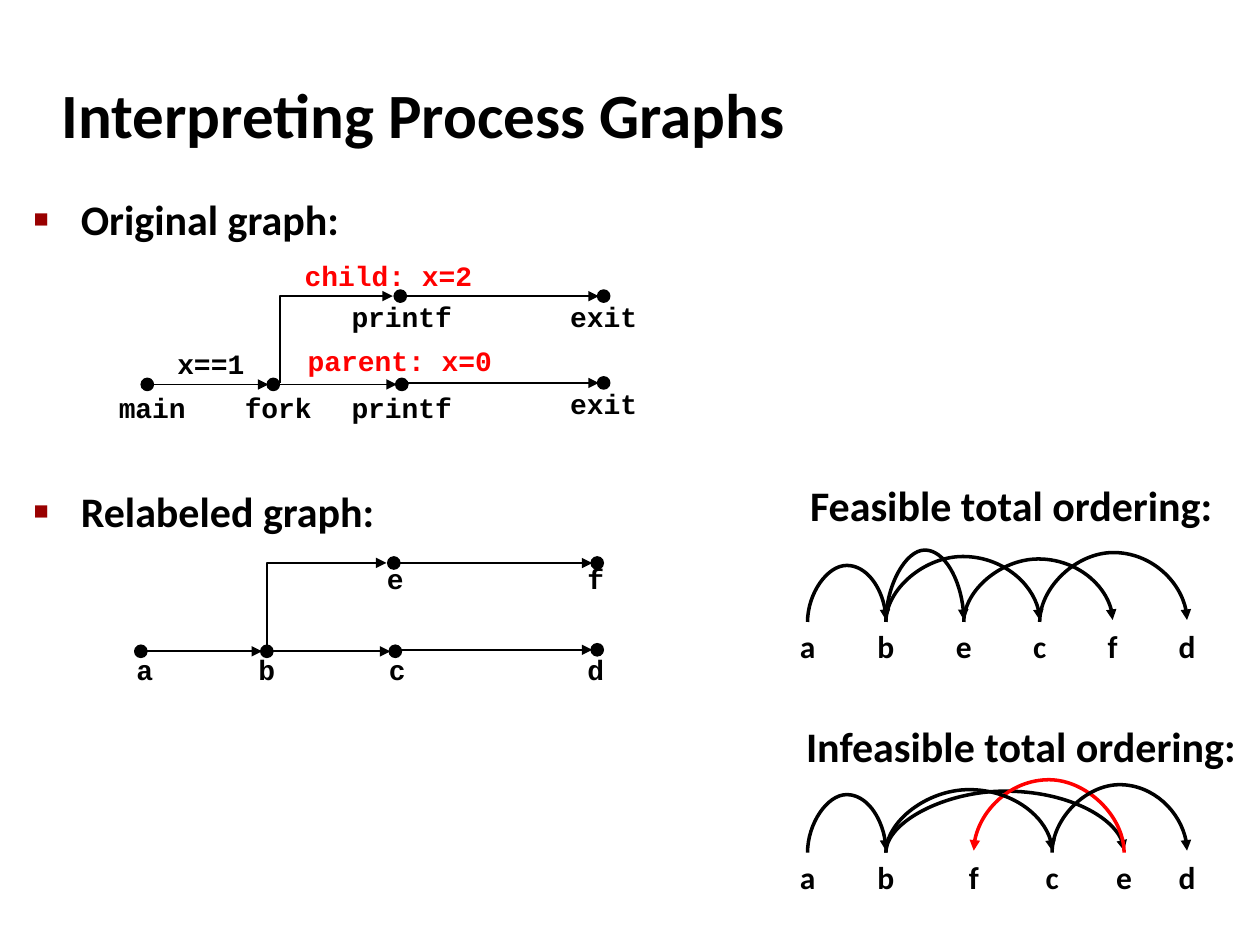
from lxml import etree
from pptx import Presentation
from pptx.dml.color import RGBColor
from pptx.enum import shapes, text
from pptx.oxml import ns
from pptx.util import Cm, Pt

BLACK, RED, MAROON = "000000", "FF0000", "990000"
DOT = 0.25
LABEL_HEIGHT = 0.94
ARC_WIDTH = 0.04  # height difference between the two ends of an arc


def colour(value):
    return RGBColor.from_string(value)


def add_xml(parent, tag, **attributes):
    return etree.SubElement(parent, ns.qn(tag), attributes)


def format_text(frame, words, size=16, font="Courier New", tint=BLACK,
                align=text.PP_ALIGN.CENTER, anchor=text.MSO_ANCHOR.TOP,
                wrap=False, before=0):
    """Write one paragraph per item of words in the given format."""
    frame.word_wrap = wrap
    frame.vertical_anchor = anchor
    for index, line in enumerate(words):
        para = frame.add_paragraph() if index else frame.paragraphs[0]
        para.alignment = align
        para.space_before = Pt(before if index else 0)
        span = para.add_run()
        span.text = line
        span.font.name = font
        span.font.size = Pt(size)
        span.font.bold = True
        span.font.color.rgb = colour(tint)
    return frame


def add_text(page, words, left, top, width, height=LABEL_HEIGHT, **style):
    box = page.shapes.add_textbox(Cm(left), Cm(top), Cm(width), Cm(height))
    return format_text(box.text_frame, [words] if isinstance(words, str) else words, **style)


def add_arrow(page, start, end, tint=BLACK, weight=1,
              kind=shapes.MSO_CONNECTOR.STRAIGHT):
    arrow = page.shapes.add_connector(kind, *(Cm(n) for n in (*start, *end)))
    arrow.line.color.rgb = colour(tint)
    arrow.line.width = Pt(weight)
    add_xml(arrow.line._get_or_add_ln(), "a:tailEnd", type="triangle")
    add_xml(arrow._element.spPr, "a:effectLst")
    return arrow


def add_turned_arrow(page, start, end, preset, adjust=None, **style):
    """Connector that leaves its start upwards; its frame is a quarter turned."""
    middle_x, middle_y = (start[0] + end[0]) / 2, (start[1] + end[1]) / 2
    half_w, half_h = abs(start[1] - end[1]) / 2, abs(start[0] - end[0]) / 2
    arrow = add_arrow(page, (middle_x - half_w, middle_y - half_h),
                      (middle_x + half_w, middle_y + half_h),
                      kind=shapes.MSO_CONNECTOR.CURVE, **style)
    properties = arrow._element.spPr
    frame = properties.find(ns.qn("a:xfrm"))
    rightward = end[0] > start[0]
    frame.set("rot", str((90 if rightward else 270) * 60000))
    frame.set("flipV", "1")
    if rightward:
        frame.set("flipH", "1")
    geometry = properties.find(ns.qn("a:prstGeom"))
    geometry.set("prst", preset)
    if adjust is not None:
        guides = geometry.find(ns.qn("a:avLst"))
        if guides is None:
            guides = add_xml(geometry, "a:avLst")
        add_xml(guides, "a:gd", name="adj1", fmla=f"val {round(adjust * 100000)}")


def add_title(page, words, left, top, width, height):
    title = page.shapes.title
    title.left, title.top, title.width, title.height = map(Cm, (left, top, width, height))
    format_text(title.text_frame, [words], size=36, font="Calibri", wrap=True,
                align=text.PP_ALIGN.LEFT, anchor=text.MSO_ANCHOR.MIDDLE)


def add_bullets(page, lines, left, top, width, height):
    frame = add_text(page, lines, left, top, width, height, size=24, before=138,
                     font="Calibri", align=text.PP_ALIGN.LEFT, wrap=True)
    for para in frame.paragraphs:
        properties = para._p.get_or_add_pPr()
        properties.set("marL", str(Cm(0.95)))
        properties.set("indent", str(-Cm(0.95)))
        add_xml(add_xml(properties, "a:buClr"), "a:srgbClr", val=MAROON)
        add_xml(properties, "a:buSzPct", val="60000")
        add_xml(properties, "a:buFont", typeface="Arial")
        add_xml(properties, "a:buChar", char="■")


def add_graph(page, left, top, labels, fork_x):
    """Process graph: parent row below, child row on top, joined at the fork."""
    parent = [(0, 1.78), (2.54, 1.78), (5.13, 1.78), (9.2, 1.75)]
    child = [(5.1, 0), (9.2, 0)]

    # Edges
    for row in (parent, child):
        for (x1, _), (x2, y) in zip(row, row[1:]):
            add_arrow(page, (left + x1 + 0.1, top + y), (left + x2 - 0.1, top + y))
    add_turned_arrow(page, (left + fork_x, top + 1.75), (left + 4.95, top),
                     "bentConnector2")

    # Nodes
    for x, y in parent + child:
        dot = page.shapes.add_shape(shapes.MSO_SHAPE.OVAL, Cm(left + x - DOT / 2),
                                    Cm(top + y - DOT / 2), Cm(DOT), Cm(DOT))
        dot.shadow.inherit = False
        dot.fill.solid()
        dot.fill.fore_color.rgb = colour(BLACK)
        dot.line.color.rgb = colour(BLACK)
        dot.line.width = Pt(0.75)

    # Labels, centred on x
    for words, x, y, tint in labels:
        width = 0.34 * len(words) + 0.51
        add_text(page, words, left + x - width / 2, top + y, width, tint=tint)


def add_ordering(page, left, top, height, heading, inset, width, stops, arcs):
    """Heading, a row of letters at the bottom, and arcs (from, to, rise, tint)."""
    letters_top = top + height - 1.02
    for letter, x in stops.items():
        add_text(page, letter, left + x - 0.42, letters_top, 0.84, 1.02,
                 size=18, font="Calibri")
    for first, last, rise, tint in arcs:
        add_turned_arrow(page, (left + stops[first], letters_top + ARC_WIDTH / 2),
                         (left + stops[last], letters_top - ARC_WIDTH / 2),
                         "curvedConnector3", rise / ARC_WIDTH, tint=tint, weight=2)
    add_text(page, heading, left + inset, top, width, 1.27, size=24,
             font="Calibri", align=text.PP_ALIGN.LEFT)


def main():
    deck = Presentation()
    deck.slide_width, deck.slide_height = Cm(25.4), Cm(19.05)
    page = deck.slides.add_slide(deck.slide_layouts[5])

    add_title(page, "Interpreting Process Graphs", 0.99, 1.22, 21.08, 2.11)
    add_bullets(page, ["Original graph:", "Relabeled graph:"], 0.43, 3.78, 13.06, 10.82)

    # Process graphs
    add_graph(page, 2.97, 5.97, [
        ("main", 0.1, 1.78, BLACK), ("fork", 2.64, 1.78, BLACK),
        ("printf", 5.13, 1.78, BLACK), ("exit", 9.2, 1.7, BLACK),
        ("printf", 5.13, -0.05, BLACK), ("exit", 9.2, -0.05, BLACK),
        ("x==1", 1.28, 0.89, BLACK), ("child: x=2", 4.86, -0.89, RED),
        ("parent: x=0", 5.09, 0.84, RED)], fork_x=2.67)
    add_graph(page, 2.84, 11.35, [
        ("a", 0.08, 1.68, BLACK), ("b", 2.54, 1.68, BLACK),
        ("c", 5.17, 1.68, BLACK), ("d", 9.17, 1.68, BLACK),
        ("e", 5.13, -0.15, BLACK), ("f", 9.17, -0.15, BLACK)], fork_x=2.54)

    # Total orderings
    add_ordering(page, 15.85, 9.55, 3.99, "Feasible total ordering:", 0.23, 8.74,
                 {"a": 0.43, "b": 2.01, "e": 3.58, "c": 5.11, "f": 6.58, "d": 8.08},
                 [("a", "b", 1.14, BLACK), ("b", "e", 1.45, BLACK),
                  ("e", "f", 1.27, BLACK), ("b", "c", 1.32, BLACK),
                  ("c", "d", 1.4, BLACK)])
    add_ordering(page, 15.85, 14.4, 3.79, "Infeasible total ordering:", 0.15, 9.32,
                 {"a": 0.43, "b": 2.01, "f": 3.78, "c": 5.36, "e": 6.81, "d": 8.08},
                 [("a", "b", 1.17, BLACK), ("b", "e", 1.24, BLACK),
                  ("e", "f", 1.47, RED), ("b", "c", 1.27, BLACK),
                  ("c", "d", 1.37, BLACK)])

    deck.save("out.pptx")


if __name__ == "__main__":
    main()
